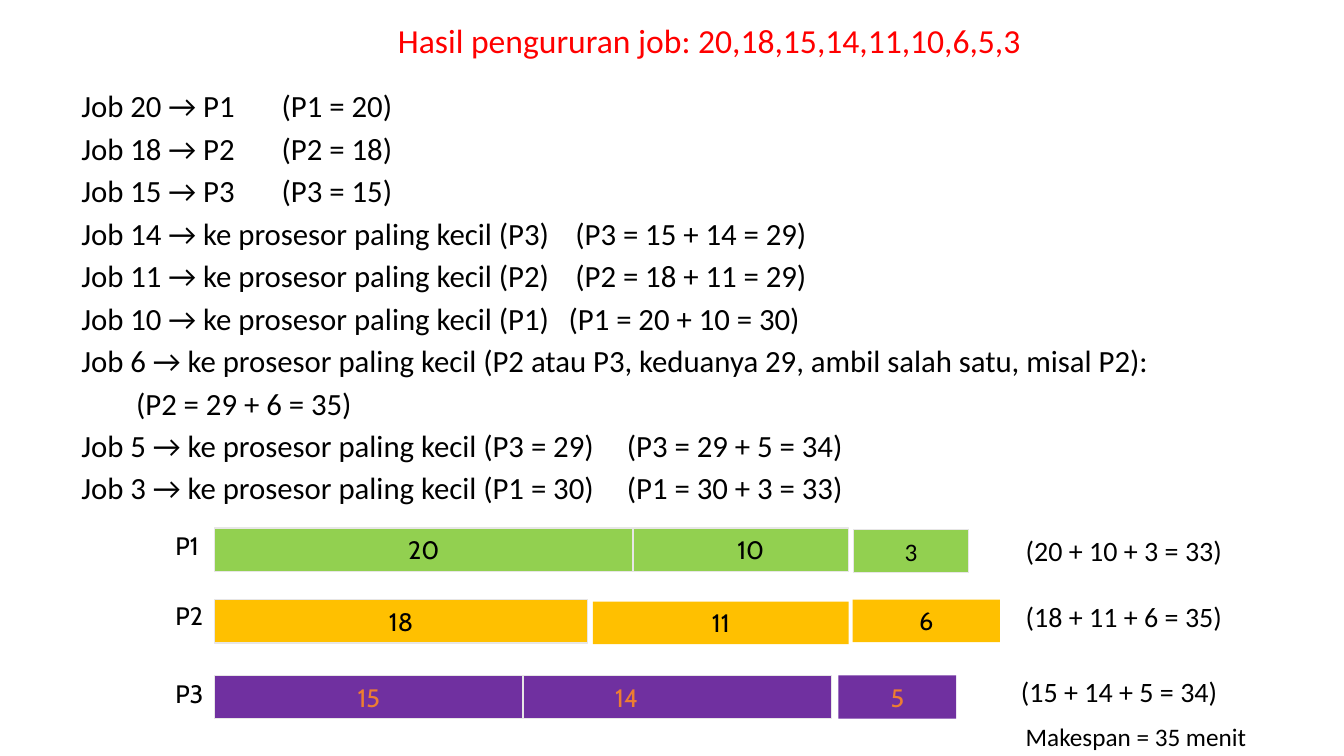
from pptx import Presentation
from pptx.dml.color import RGBColor
from pptx.enum import shapes, text
from pptx.oxml import parse_xml
from pptx.oxml.ns import nsdecls
from pptx.util import Cm, Pt

BLACK = RGBColor(0x00, 0x00, 0x00)
RED = RGBColor(0xFF, 0x00, 0x00)
GREEN = RGBColor(0x92, 0xD0, 0x50)
AMBER = RGBColor(0xFF, 0xC0, 0x00)
PURPLE = RGBColor(0x70, 0x30, 0xA0)
ORANGE = RGBColor(0xED, 0x7D, 0x31)
EDGE = RGBColor(0xE7, 0xE6, 0xE6)


def add_run(p, wording, size, color=BLACK, font="Calibri"):
    r = p.add_run()
    r.text = wording
    r.font.size = Pt(size)
    r.font.name = font
    r.font.color.rgb = color


def add_box(left, top, width, height, wrap=True):
    """Add an empty text box, measured in cm, and return its text frame."""
    tf = slide.shapes.add_textbox(Cm(left), Cm(top), Cm(width), Cm(height)).text_frame
    tf.word_wrap = wrap
    tf.auto_size = text.MSO_AUTO_SIZE.SHAPE_TO_FIT_TEXT
    return tf


prs = Presentation()
prs.slide_width, prs.slide_height = Cm(33.87), Cm(19.05)
slide = prs.slides.add_slide(prs.slide_layouts[6])

# Assignment steps: job and target, tab stop in cm, resulting load
steps = [
    ("Job 20 → P1", 5.05, "(P1 = 20)"),
    ("Job 18 → P2", 5.05, "(P2 = 18)"),
    ("Job 15 → P3", 5.05, "(P3 = 15)"),
    ("Job 14 → ke prosesor paling kecil (P3)", 12.45, "(P3 = 15 + 14 = 29)"),
    ("Job 11 → ke prosesor paling kecil (P2)", 12.45, "(P2 = 18 + 11 = 29)"),
    ("Job 10 → ke prosesor paling kecil (P1)", 12.28, "(P1 = 20 + 10 = 30)"),
    ("Job 6 → ke prosesor paling kecil (P2 atau P3, keduanya 29, ambil salah satu, misal P2):",
     1.38, "(P2 = 29 + 6 = 35)"),
    ("Job 5 → ke prosesor paling kecil (P3 = 29)", 13.75, "(P3 = 29 + 5 = 34)"),
    ("Job 3 → ke prosesor paling kecil (P1 = 30)", 13.75, "(P1 = 30 + 3 = 33)"),
]
tf = add_box(1.8, 1.93, 29.92, 11)
for i, (job, stop, load) in enumerate(steps):
    p = tf.paragraphs[0] if i == 0 else tf.add_paragraph()
    p.line_spacing = 1.15
    p._p.get_or_add_pPr().append(parse_xml(
        f'<a:tabLst {nsdecls("a")}><a:tab pos="{Cm(stop)}" algn="l"/></a:tabLst>'))
    add_run(p, job, 22)
    if job.endswith(":"):
        p.add_line_break()
    add_run(p, "\t" + load, 22)

p = add_box(9.78, 0.38, 16.94, 1.27).paragraphs[0]
add_run(p, "Hasil pengururan job: 20,18,15,14,11,10,6,5,3", 24, RED)

# Schedule bars: label, left, top, width, height, outlined, label shift (cm)
schedule = [
    (GREEN, BLACK, [("20", 5.41, 13.31, 10.54, 1.09, True, 0),
                    ("10", 15.95, 13.31, 5.44, 1.09, True, 0.25),
                    ("3", 21.51, 13.34, 2.9, 1.09, True, 0)]),
    (AMBER, BLACK, [("18", 5.41, 15.11, 9.4, 1.09, True, 0),
                    ("11", 14.94, 15.16, 6.45, 1.07, False, 0),
                    ("6", 21.49, 15.11, 3.71, 1.07, False, 0)]),
    (PURPLE, ORANGE, [("15", 5.41, 17.02, 7.77, 1.09, True, 0),
                      ("14", 13.18, 17.02, 7.77, 1.09, True, -1.27),
                      ("5", 21.13, 17.02, 2.97, 1.09, False, 0)]),
]
for fill, ink, bars in schedule:
    for label, left, top, width, height, outlined, shift in bars:
        sp = slide.shapes.add_shape(shapes.MSO_SHAPE.RECTANGLE,
                                    Cm(left), Cm(top), Cm(width), Cm(height))
        sp.shadow.inherit = False
        sp.fill.solid()
        sp.fill.fore_color.rgb = fill
        if outlined:
            sp.line.color.rgb = EDGE
            sp.line.width = Pt(1)
        else:
            sp.line.fill.background()
        tf = sp.text_frame
        tf.vertical_anchor = text.MSO_ANCHOR.MIDDLE
        tf.margin_left = Cm(0.25 + max(0, 2 * shift))
        tf.margin_right = Cm(0.25 + max(0, -2 * shift))
        p = tf.paragraphs[0]
        p.alignment = text.PP_ALIGN.CENTER
        add_run(p, label, 18, ink, "Calibri" if label == "3" else "Cabin")

tf = add_box(4.17, 13.08, 1.65, 4.85)
for i, (processor, gap) in enumerate([("P1", 0), ("P2", 24), ("P3", 30)]):
    p = tf.paragraphs[0] if i == 0 else tf.add_paragraph()
    p.line_spacing = 1.2
    p.space_before = Pt(gap)
    add_run(p, processor, 18, font="Cabin")

totals = [
    ("(20 + 10 + 3 = 33)", 25.6, 13.31),
    ("(18 + 11 + 6 = 35)", 25.6, 14.99),
    ("(15 + 14 + 5 = 34)", 25.48, 16.87),
]
for total, left, top in totals:
    add_run(add_box(left, top, 5.66, 1.12, wrap=False).paragraphs[0], total, 20)

p = add_box(25.6, 17.93, 7.24, 1.09).paragraphs[0]
p.line_spacing = 1.15
add_run(p, "Makespan = 35 menit", 18)

prs.save("out.pptx")
